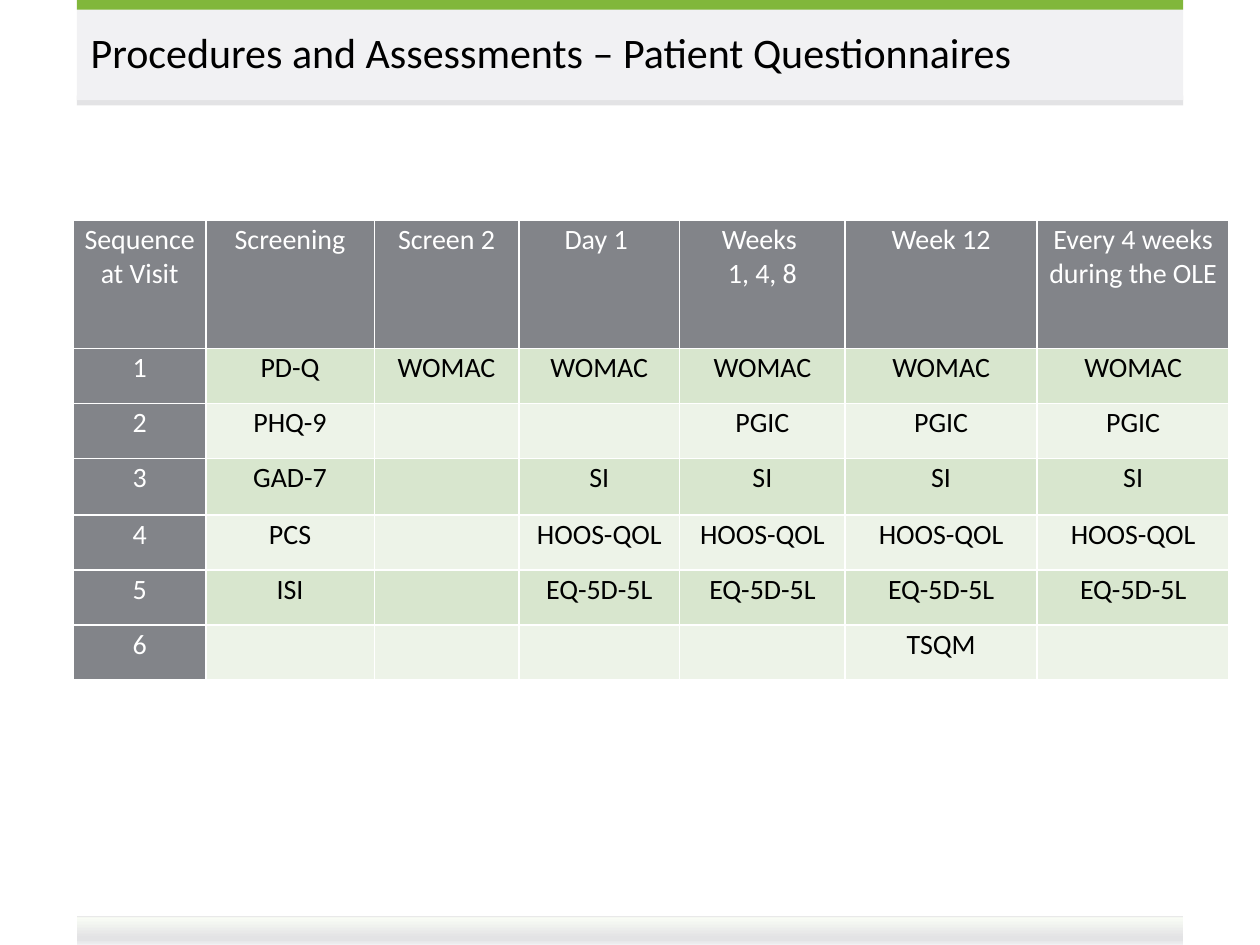
from dataclasses import dataclass

from lxml import etree
from pptx import Presentation
from pptx.dml.color import RGBColor
from pptx.enum.shapes import MSO_SHAPE
from pptx.enum.text import MSO_ANCHOR, PP_ALIGN
from pptx.oxml.ns import qn
from pptx.util import Pt

RECTANGLE = MSO_SHAPE.RECTANGLE
CENTER, LEFT = PP_ALIGN.CENTER, PP_ALIGN.LEFT
TOP, MIDDLE = MSO_ANCHOR.TOP, MSO_ANCHOR.MIDDLE

FONT = "Calibri"
COLORS = {
    "black": "000000",
    "white": "FFFFFF",
    "green": "81B73B",
    "light gray": "F1F1F3",
    "edge gray": "E3E3E5",
    "header gray": "828489",
    "odd row": "D8E6CE",
    "even row": "EDF3E8",
    "pale green": "F9FCF5",
}
FOOTER_STOPS = [
    (0, "edge gray"),
    (7, "pale green"),
    (74, "edge gray"),
    (83, "edge gray"),
    (100, "light gray"),
]

BAND_LEFT, BAND_WIDTH = 43.9, 632.2


@dataclass
class Band:
    top: float
    height: float
    color: str


TITLE_BANDS = [
    Band(54.7, 5.6, "edge gray"),
    Band(5, 52.3, "light gray"),
    Band(0, 5.5, "green"),
]
FOOTER_BAND = Band(523.4, 16.6, "edge gray")

COLUMN_WIDTHS = [75.5, 96.3, 82.6, 92, 94.5, 109.8, 109.7]
ROW_HEIGHTS = [73.2, 31.4, 31.4, 32.4, 31.4, 31.4, 31.4]
ROWS = [
    ["Sequence at Visit", "Screening", "Screen 2", "Day 1 ",
     "Weeks \n1, 4, 8", "Week 12", "Every 4 weeks during the OLE"],
    ["1", "PD-Q"] + ["WOMAC"] * 5,
    ["2", "PHQ-9", "", ""] + ["PGIC"] * 3,
    ["3", "GAD-7", ""] + ["SI"] * 4,
    ["4", "PCS", ""] + ["HOOS-QOL"] * 4,
    ["5", "ISI", ""] + ["EQ-5D-5L"] * 4,
    ["6", "", "", "", "", "TSQM", ""],
]


def rgb(name: str) -> RGBColor:
    return RGBColor.from_string(COLORS[name])


def add_span(para, text: str, size: float, color: str) -> None:
    span = para.add_run()
    span.text = text
    span.font.name = FONT
    span.font.size = Pt(size)
    span.font.color.rgb = rgb(color)


def add_band(page, band: Band):
    shape = page.shapes.add_shape(
        RECTANGLE, Pt(BAND_LEFT), Pt(band.top), Pt(BAND_WIDTH), Pt(band.height))
    shape.shadow.inherit = False
    shape.line.fill.background()
    shape.fill.solid()
    shape.fill.fore_color.rgb = rgb(band.color)
    return shape


def shade_downward(shape, stops: list) -> None:
    shape.fill.gradient()
    shape.fill.gradient_angle = 270
    stop_list = shape._element.spPr.find(".//" + qn("a:gsLst"))
    for old_stop in list(stop_list):
        stop_list.remove(old_stop)
    for percent, color in stops:
        stop = etree.SubElement(stop_list, qn("a:gs"), pos=str(percent * 1000))
        etree.SubElement(stop, qn("a:srgbClr"), val=COLORS[color])


def fill_title(page, text: str) -> None:
    title = page.shapes.title
    title.left, title.top = Pt(44.6), Pt(5)
    title.width, title.height = Pt(630), Pt(55.4)
    page.shapes._spTree.append(title._element)
    frame = title.text_frame
    frame.word_wrap = True
    frame.vertical_anchor = MIDDLE
    para = frame.paragraphs[0]
    para.alignment = LEFT
    para.line_spacing = Pt(22)
    add_span(para, text, 24, "black")


def add_borders(cell) -> None:
    properties = cell._tc.get_or_add_tcPr()
    for side in ("lnL", "lnR", "lnT", "lnB"):
        line = etree.SubElement(properties, qn("a:" + side), w=str(Pt(1)))
        fill = etree.SubElement(line, qn("a:solidFill"))
        etree.SubElement(fill, qn("a:srgbClr"), val=COLORS["white"])


def format_cell(cell, text: str, fill: str, color: str) -> None:
    cell.margin_left = cell.margin_right = Pt(3.6)
    cell.margin_top = cell.margin_bottom = Pt(1.4)
    cell.vertical_anchor = TOP
    add_borders(cell)
    cell.fill.solid()
    cell.fill.fore_color.rgb = rgb(fill)
    para = cell.text_frame.paragraphs[0]
    para.alignment = CENTER
    para.font.size = Pt(16)
    if not text:
        return
    for number, line in enumerate(text.split("\n")):
        if number:
            para.add_line_break()
        add_span(para, line, 16, color)


def add_schedule(page) -> None:
    table = page.shapes.add_table(
        len(ROWS), len(COLUMN_WIDTHS), Pt(42.1), Pt(126),
        Pt(sum(COLUMN_WIDTHS)), Pt(sum(ROW_HEIGHTS))).table
    for column, width in zip(table.columns, COLUMN_WIDTHS):
        column.width = Pt(width)
    for row, height in zip(table.rows, ROW_HEIGHTS):
        row.height = Pt(height)
    for r, texts in enumerate(ROWS):
        for c, text in enumerate(texts):
            if r == 0 or c == 0:
                fill, color = "header gray", "white"
            else:
                fill, color = ("odd row" if r % 2 else "even row"), "black"
            cell = table.cell(r, c)
            format_cell(cell, text, fill, color)
            if r == 0:
                for span in cell.text_frame.paragraphs[0].runs:
                    span.font.bold = False


def main() -> None:
    deck = Presentation()
    deck.slide_width, deck.slide_height = Pt(720), Pt(540)
    page = deck.slides.add_slide(deck.slide_layouts[5])
    shade_downward(add_band(page, FOOTER_BAND), FOOTER_STOPS)
    for band in TITLE_BANDS:
        add_band(page, band)
    fill_title(page, "Procedures and Assessments – Patient Questionnaires")
    add_schedule(page)
    deck.save("out.pptx")


if __name__ == "__main__":
    main()
